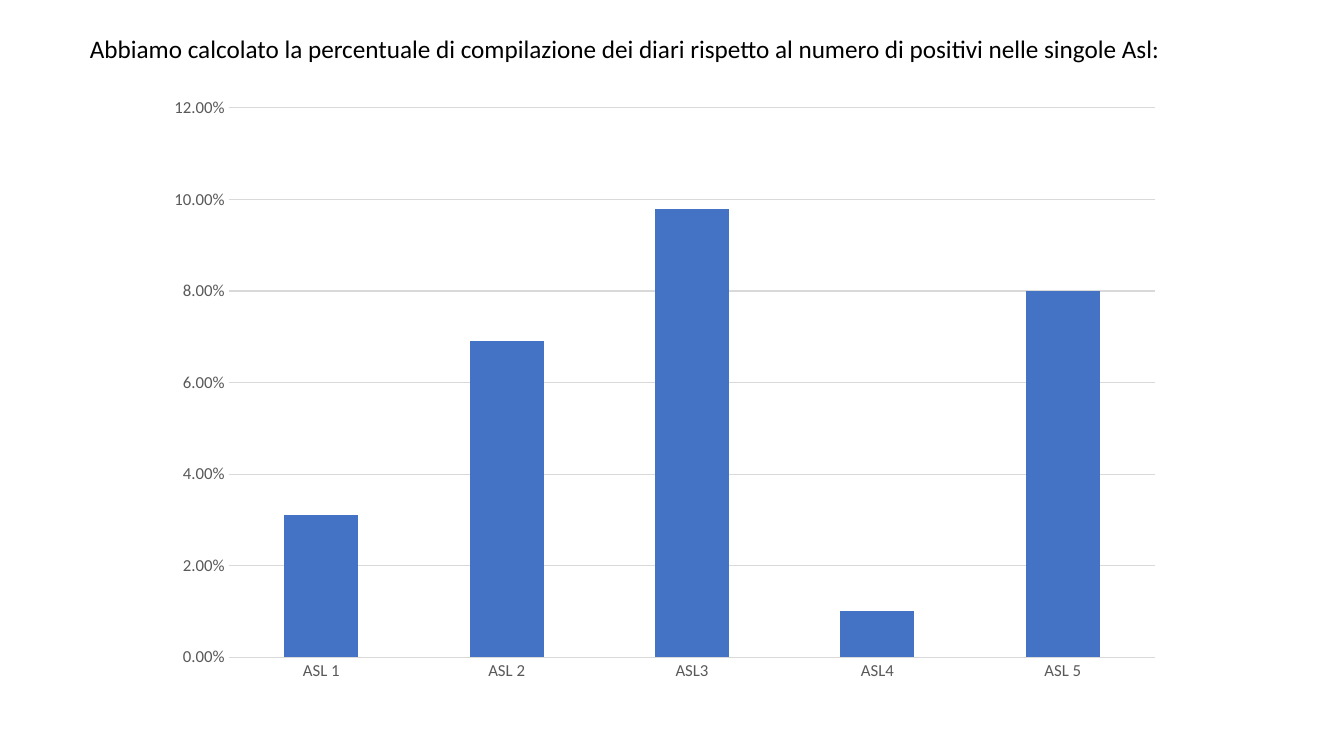
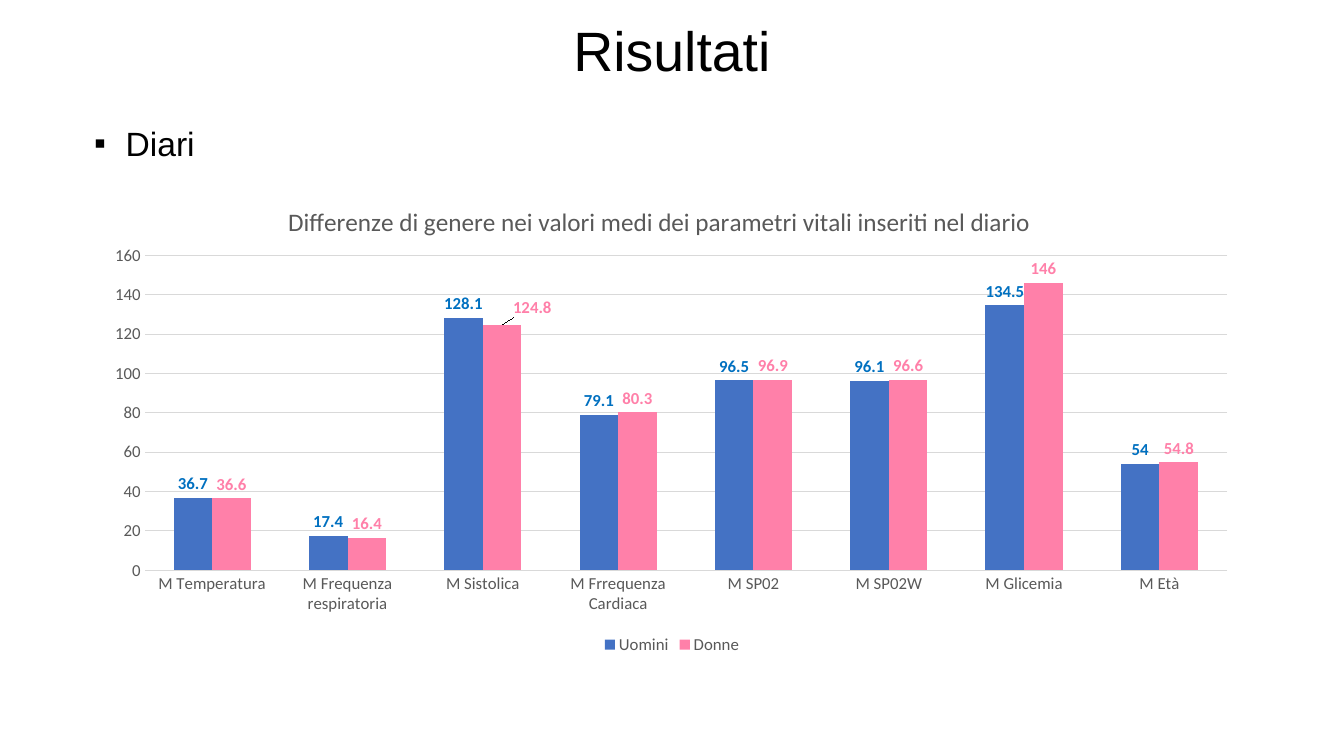
from dataclasses import dataclass

from lxml import etree
from pptx import Presentation
from pptx.chart.data import CategoryChartData
from pptx.dml.color import RGBColor
from pptx.enum.chart import (XL_CHART_TYPE, XL_LABEL_POSITION,
                             XL_LEGEND_POSITION, XL_TICK_MARK)
from pptx.enum.text import MSO_ANCHOR, MSO_AUTO_SIZE, PP_ALIGN
from pptx.oxml.ns import qn
from pptx.util import Pt

COLUMNS = XL_CHART_TYPE.COLUMN_CLUSTERED
LABEL_OUTSIDE = XL_LABEL_POSITION.OUTSIDE_END
LEGEND_BOTTOM = XL_LEGEND_POSITION.BOTTOM
NO_TICK = XL_TICK_MARK.NONE
TOP, MIDDLE = MSO_ANCHOR.TOP, MSO_ANCHOR.MIDDLE
NO_AUTOFIT = MSO_AUTO_SIZE.NONE
LEFT, CENTER = PP_ALIGN.LEFT, PP_ALIGN.CENTER
LAYOUT_CONTENT, LAYOUT_TITLE_ONLY = 1, 5


@dataclass(frozen=True)
class Theme:
    text: RGBColor = RGBColor(0x00, 0x00, 0x00)
    muted: RGBColor = RGBColor(0x59, 0x59, 0x59)
    grid: RGBColor = RGBColor(0xD9, 0xD9, 0xD9)
    blue: RGBColor = RGBColor(0x44, 0x72, 0xC4)
    blue_label: RGBColor = RGBColor(0x00, 0x70, 0xC0)
    pink: RGBColor = RGBColor(0xFF, 0x80, 0xA9)
    heading_font: str = "Arial"
    body_font: str = "Calibri"
    title_size: float = 39.6
    list_size: float = 24
    lead_size: float = 18
    chart_size: float = 12


class Deck:
    def __init__(self, theme):
        self.theme = theme
        self.presentation = Presentation()
        self.presentation.slide_width = Pt(960)
        self.presentation.slide_height = Pt(540)
        self.slide = None

    def add_slide(self, layout):
        layouts = self.presentation.slide_layouts
        self.slide = self.presentation.slides.add_slide(layouts[layout])

    def style_font(self, font, name, size, color, bold=False):
        font.name = name
        font.size = Pt(size)
        font.bold = bold
        font.color.rgb = color

    def fill_placeholder(self, shape, box, text, name, size, align, anchor):
        shape.left, shape.top, shape.width, shape.height = map(Pt, box)
        frame = shape.text_frame
        frame.word_wrap = True
        frame.auto_size = NO_AUTOFIT
        frame.vertical_anchor = anchor
        paragraph = frame.paragraphs[0]
        paragraph.alignment = align
        paragraph.space_before = Pt(0)
        run = paragraph.add_run()
        run.text = text
        self.style_font(run.font, name, size, self.theme.text)
        return paragraph

    def title(self, text, box):
        paragraph = self.fill_placeholder(
            self.slide.shapes.title, box, text, self.theme.heading_font,
            self.theme.title_size, CENTER, MIDDLE)
        paragraph.line_spacing = 0.9

    def lead(self, text, box):
        self.fill_placeholder(
            self.slide.shapes.title, box, text, self.theme.body_font,
            self.theme.lead_size, LEFT, TOP)

    def bullet(self, text, box):
        paragraph = self.fill_placeholder(
            self.slide.placeholders[1], box, text, self.theme.heading_font,
            self.theme.list_size, LEFT, TOP)
        properties = paragraph._p.get_or_add_pPr()
        indent = Pt(22.5)
        properties.set("marL", str(indent))
        properties.set("indent", str(-indent))
        font = etree.SubElement(properties, qn("a:buFont"))
        font.set("typeface", self.theme.heading_font)
        etree.SubElement(properties, qn("a:buChar")).set("char", "▪")

    def manual_layout(self, parent, position, **settings):
        for old in parent.findall(qn("c:layout")):
            parent.remove(old)
        layout = etree.Element(qn("c:layout"))
        manual = etree.SubElement(layout, qn("c:manualLayout"))
        for key, value in settings.items():
            etree.SubElement(manual, qn(f"c:{key}")).set("val", str(value))
        parent.insert(position, layout)

    def column_chart(self, box, categories, series, maximum, step,
                     number_format, plot_area):
        theme = self.theme
        data = CategoryChartData(number_format=number_format)
        data.categories = categories
        for name, values, _ in series:
            data.add_series(name, values)
        frame = self.slide.shapes.add_chart(COLUMNS, *map(Pt, box), data)
        chart = frame.chart
        chart.has_title = False
        chart.has_legend = False
        self.style_font(chart.font, theme.body_font, theme.chart_size,
                        theme.muted)
        plot = chart.plots[0]
        plot.gap_width = 150
        plot.overlap = 0
        plot.vary_by_categories = False
        for item, (_, _, color) in zip(plot.series, series):
            item.format.fill.solid()
            item.format.fill.fore_color.rgb = color
        for axis in (chart.category_axis, chart.value_axis):
            axis.major_tick_mark = axis.minor_tick_mark = NO_TICK
            axis.format.line.fill.background()
            self.style_font(axis.tick_labels.font, theme.body_font,
                            theme.chart_size, theme.muted)
        axis = chart.value_axis
        axis.minimum_scale = 0
        axis.maximum_scale = maximum
        axis.major_unit = step
        axis.tick_labels.number_format = number_format
        axis.tick_labels.number_format_is_linked = False
        axis.has_major_gridlines = True
        axis.major_gridlines.format.line.color.rgb = theme.grid
        axis.major_gridlines.format.line.width = Pt(0.75)
        x, y, w, h = plot_area
        self.manual_layout(
            chart._chartSpace.chart.plotArea, 0, layoutTarget="inner",
            xMode="edge", yMode="edge", x=x, y=y, w=w, h=h)
        return chart

    def chart_title(self, chart, text, x, y):
        title = chart.chart_title
        run = title.text_frame.paragraphs[0].add_run()
        run.text = text
        self.style_font(run.font, self.theme.body_font, self.theme.lead_size,
                        self.theme.muted)
        title.include_in_layout = False
        self.manual_layout(title._element, 1, xMode="edge", yMode="edge",
                           x=x, y=y)

    def legend(self, chart):
        chart.has_legend = True
        chart.legend.position = LEGEND_BOTTOM
        chart.legend.include_in_layout = False
        self.style_font(chart.legend.font, self.theme.body_font,
                        self.theme.chart_size, self.theme.muted)

    def value_labels(self, series, color):
        labels = series.data_labels
        labels.show_value = True
        labels.position = LABEL_OUTSIDE
        self.style_font(labels.font, self.theme.body_font,
                        self.theme.chart_size, color, bold=True)

    def move_label(self, series, index, color, x, y):
        label = series.points[index].data_label
        self.style_font(label.font, self.theme.body_font,
                        self.theme.chart_size, color, bold=True)
        label.position = LABEL_OUTSIDE
        element = series.data_labels._element.find(qn("c:dLbl"))
        self.manual_layout(element, 1, x=x, y=y)


def compilation_slide(deck):
    deck.add_slide(LAYOUT_TITLE_ONLY)
    deck.lead("Abbiamo calcolato la percentuale di compilazione dei diari "
              "rispetto al numero di positivi nelle singole Asl:",
              (57, 20, 830, 29))
    deck.column_chart(
        (110, 62, 730, 433),
        ["ASL 1", "ASL 2", "ASL3", "ASL4", "ASL 5"],
        [("Series 1", [0.031, 0.069, 0.098, 0.01, 0.08], deck.theme.blue)],
        0.12, 0.02, "0.00%", (0.073, 0.035, 0.907, 0.906))


def results_slide(deck):
    theme = deck.theme
    deck.add_slide(LAYOUT_CONTENT)
    deck.title("Risultati", (66, 4, 828, 68))
    deck.bullet("Diari", (60, 84, 329, 36))
    chart = deck.column_chart(
        (66, 127.5, 828, 343),
        ["M Temperatura", "M Frequenza respiratoria", "M Sistolica",
         "M Frrequenza Cardiaca", "M SP02", "M SP02W", "M Glicemia", "M Età"],
        [("Uomini", [36.7, 17.4, 128.1, 79.1, 96.5, 96.1, 134.5, 54],
          theme.blue),
         ("Donne", [36.6, 16.4, 124.8, 80.3, 96.9, 96.6, 146, 54.8],
          theme.pink)],
        160, 20, "General", (0.045, 0.16, 0.934, 0.656))
    deck.chart_title(chart, "Differenze di genere nei valori medi dei "
                     "parametri vitali inseriti nel diario", 0.165, 0.045)
    deck.legend(chart)
    men, women = chart.plots[0].series
    deck.value_labels(men, theme.blue_label)
    deck.value_labels(women, theme.pink)
    deck.move_label(women, 2, theme.pink, 0.026, -0.006)


def main():
    deck = Deck(Theme())
    compilation_slide(deck)
    results_slide(deck)
    deck.presentation.save("out.pptx")


if __name__ == "__main__":
    main()
